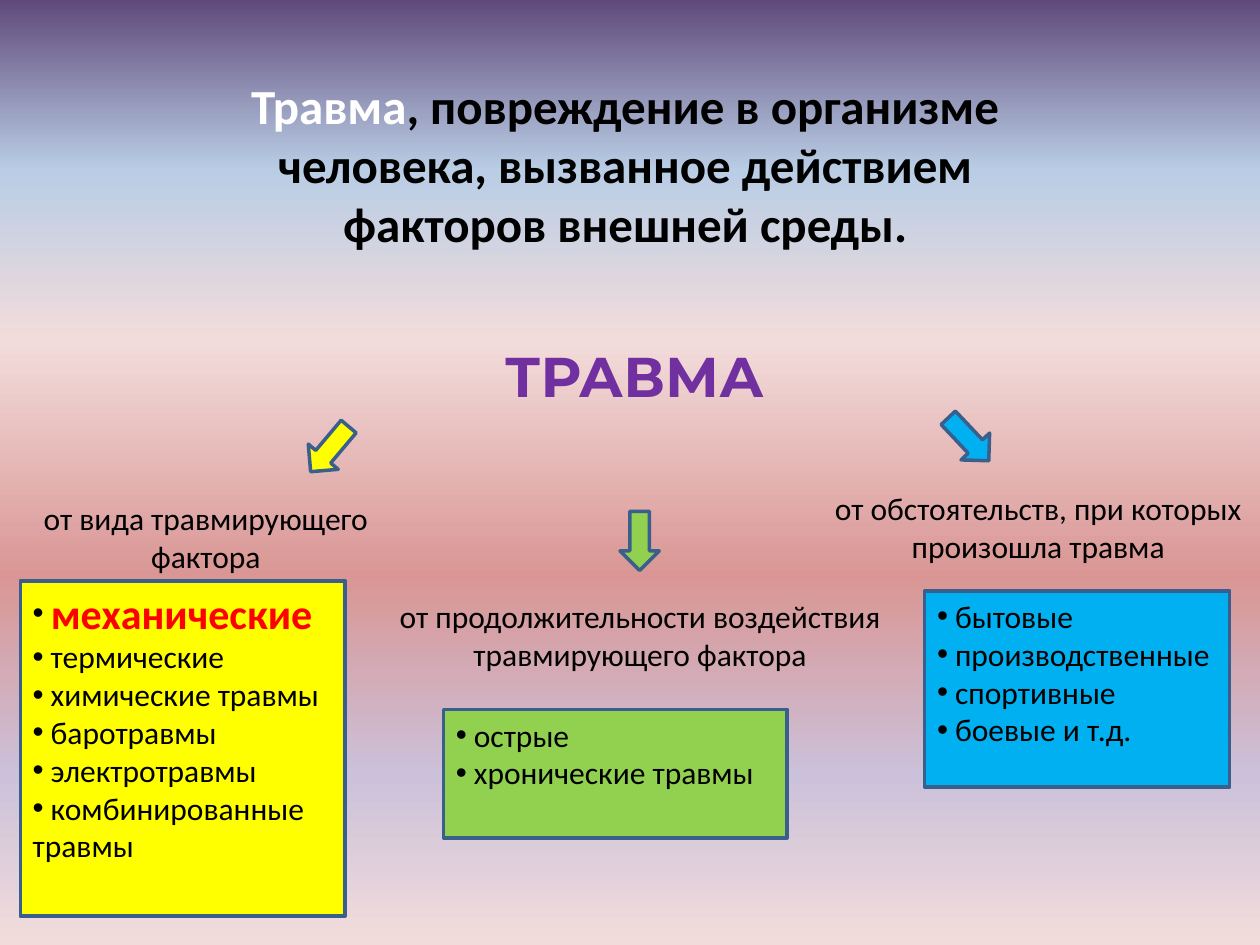
from lxml.etree import SubElement
from pptx import Presentation
from pptx.dml.color import RGBColor
from pptx.enum.shapes import MSO_SHAPE as Shape
from pptx.enum.text import MSO_ANCHOR as Anchor, MSO_AUTO_SIZE as AutoSize, PP_ALIGN as Align
from pptx.oxml.ns import qn
from pptx.util import Cm, Pt

COLORS = {
    "yellow": "FFFF00", "green": "92D050", "blue": "00B0F0", "outline": "3A5F8C",
    "black": "000000", "white": "FFFFFF", "red": "FF0000", "purple": "7030A0",
}
BACKGROUND_STOPS = [(0, "604A7B"), (18, "B9CDE5"), (36, "F2DCDB"),
                    (61, "D99694"), (82, "CCC1DA"), (100, "F2DCDB")]


def add_run(paragraph, text, size=18, color="black", bold=False, font="Calibri"):
    run = paragraph.add_run()
    run.text = text
    run.font.name, run.font.size, run.font.bold = font, Pt(size), bold
    run.font.color.rgb = RGBColor.from_string(COLORS[color])


class SlideBuilder:
    def __init__(self, slide):
        self.slide = slide

    def background(self, stops):
        fill = self.slide.background.fill
        fill.gradient()
        fill.gradient_angle = 270
        stop_list = self.slide.element.find(".//" + qn("a:gsLst"))
        for old_stop in list(stop_list):
            stop_list.remove(old_stop)
        for percent, color in stops:
            stop = SubElement(stop_list, qn("a:gs"), pos=str(percent * 1000))
            SubElement(stop, qn("a:srgbClr"), val=color)

    def shape(self, kind, box, color, rotation=0):
        shape = self.slide.shapes.add_shape(kind, *map(Cm, box))
        shape.shadow.inherit = False
        shape.rotation = rotation
        shape.fill.solid()
        shape.fill.fore_color.rgb = RGBColor.from_string(COLORS[color])
        shape.line.color.rgb = RGBColor.from_string(COLORS["outline"])
        shape.line.width = Pt(2)

    def title(self, box, runs):
        title = self.slide.shapes.title
        title.left, title.top, title.width, title.height = map(Cm, box)
        frame = title.text_frame
        frame.auto_size, frame.vertical_anchor = AutoSize.NONE, Anchor.TOP
        frame.paragraphs[0].alignment = Align.CENTER
        for text, color in runs:
            add_run(frame.paragraphs[0], text, size=28, color=color, bold=True)

    def text(self, box, lines, align=Align.CENTER, bullet=False, **style):
        """Each line is a string, or a list of (text, style) runs."""
        frame = self.slide.shapes.add_textbox(*map(Cm, box)).text_frame
        frame.word_wrap = True
        for index, line in enumerate(lines):
            paragraph = frame.add_paragraph() if index else frame.paragraphs[0]
            paragraph.alignment = align
            if bullet:
                properties = paragraph._p.get_or_add_pPr()
                SubElement(properties, qn("a:buFont"), typeface="Arial")
                SubElement(properties, qn("a:buChar"), char="•")
            runs = [(line, style)] if isinstance(line, str) else line
            for text, run_style in runs:
                add_run(paragraph, text, **run_style)


def main():
    presentation = Presentation()
    presentation.slide_width, presentation.slide_height = Cm(25.4), Cm(19.05)
    builder = SlideBuilder(presentation.slides.add_slide(presentation.slide_layouts[5]))
    builder.background(BACKGROUND_STOPS)

    # Definition and the root of the scheme
    builder.title((4.37, 1.4, 16.46, 3.84), [
        ("Травма", "white"),
        (", повреждение в организме человека, вызванное действием факторов внешней среды.",
         "black")])
    builder.text((9.93, 6.76, 5.89, 1.63), ["ТРАВМА"], align=Align.LEFT,
                 size=32, color="purple", bold=True, font="Montserrat")

    # Branches: colour, arrow (left, top, rotation), heading, panel, list width, list
    mechanical = [(" ", {}), ("механические", {"size": 24, "color": "red", "bold": True})]
    branches = [
        ("yellow", (6.25, 8.46, 40.1),
         (0.58, 9.93, 7.14, 1.8), ["от вида травмирующего", "фактора"],
         (0.41, 11.71, 6.55, 6.76), 6.93,
         [mechanical, " термические", " химические травмы", " баротравмы",
          " электротравмы", " комбинированные травмы"]),
        ("green", (12.5, 10.31, 0),
         (7.75, 11.91, 10.31, 1.8), ["от продолжительности воздействия травмирующего фактора"],
         (8.94, 14.3, 6.93, 2.59), 6.6,
         [" острые", " хронические травмы"]),
        ("blue", (19.13, 8.26, 316.7),
         (16.46, 9.73, 8.94, 1.8), ["от обстоятельств, при которых", "произошла травма"],
         (18.64, 11.91, 6.15, 3.96), 6.35,
         [" бытовые", " производственные", " спортивные", " боевые и т.д."]),
    ]
    for color, (left, top, rotation), heading_box, heading, panel, list_width, items in branches:
        builder.shape(Shape.RECTANGLE, panel, color)
        builder.shape(Shape.DOWN_ARROW, (left, top, 0.79, 1.19), color, rotation)
        builder.text(heading_box, heading)
        builder.text((*panel[:2], list_width, panel[3]), items, align=Align.LEFT, bullet=True)

    presentation.save("out.pptx")


if __name__ == "__main__":
    main()
